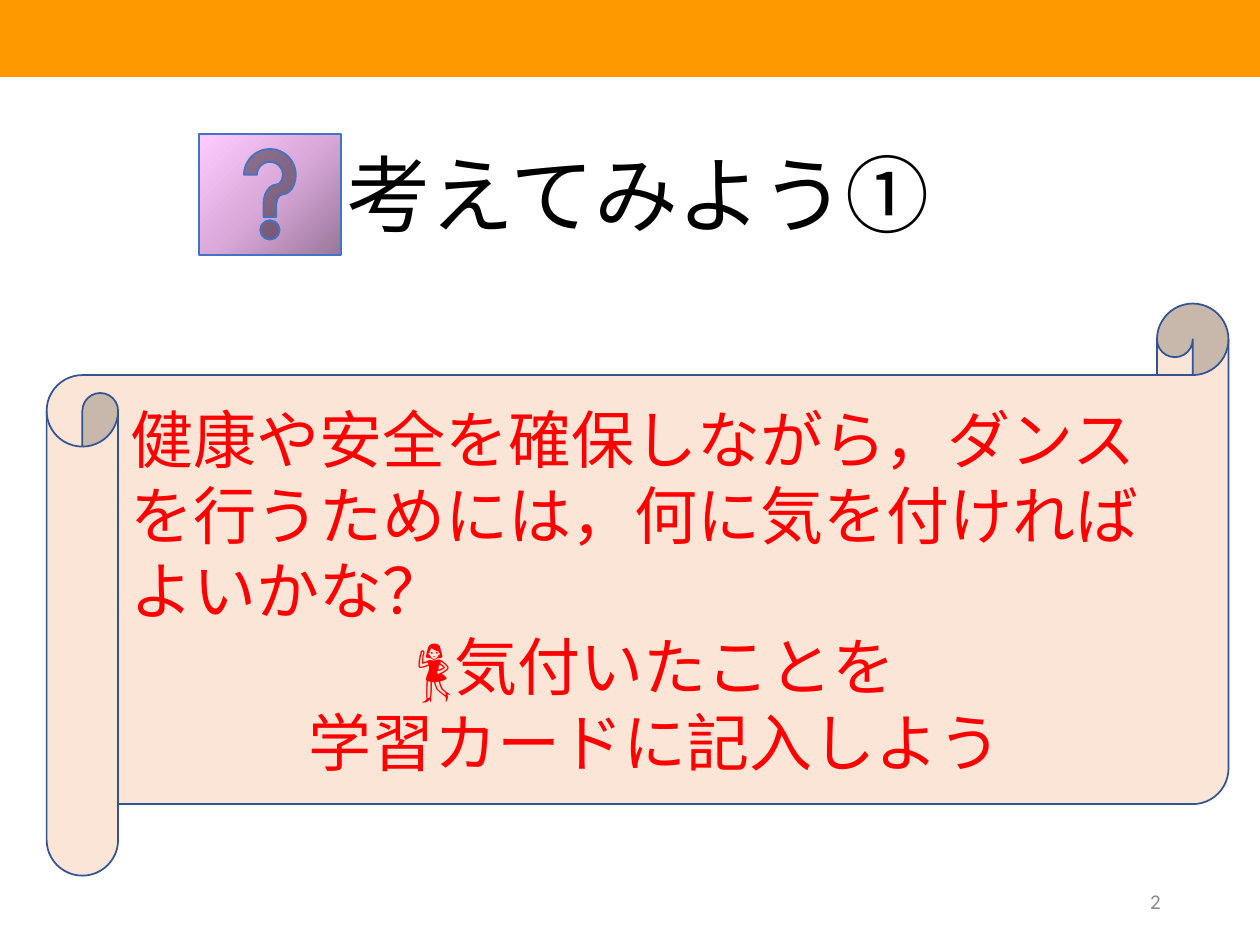
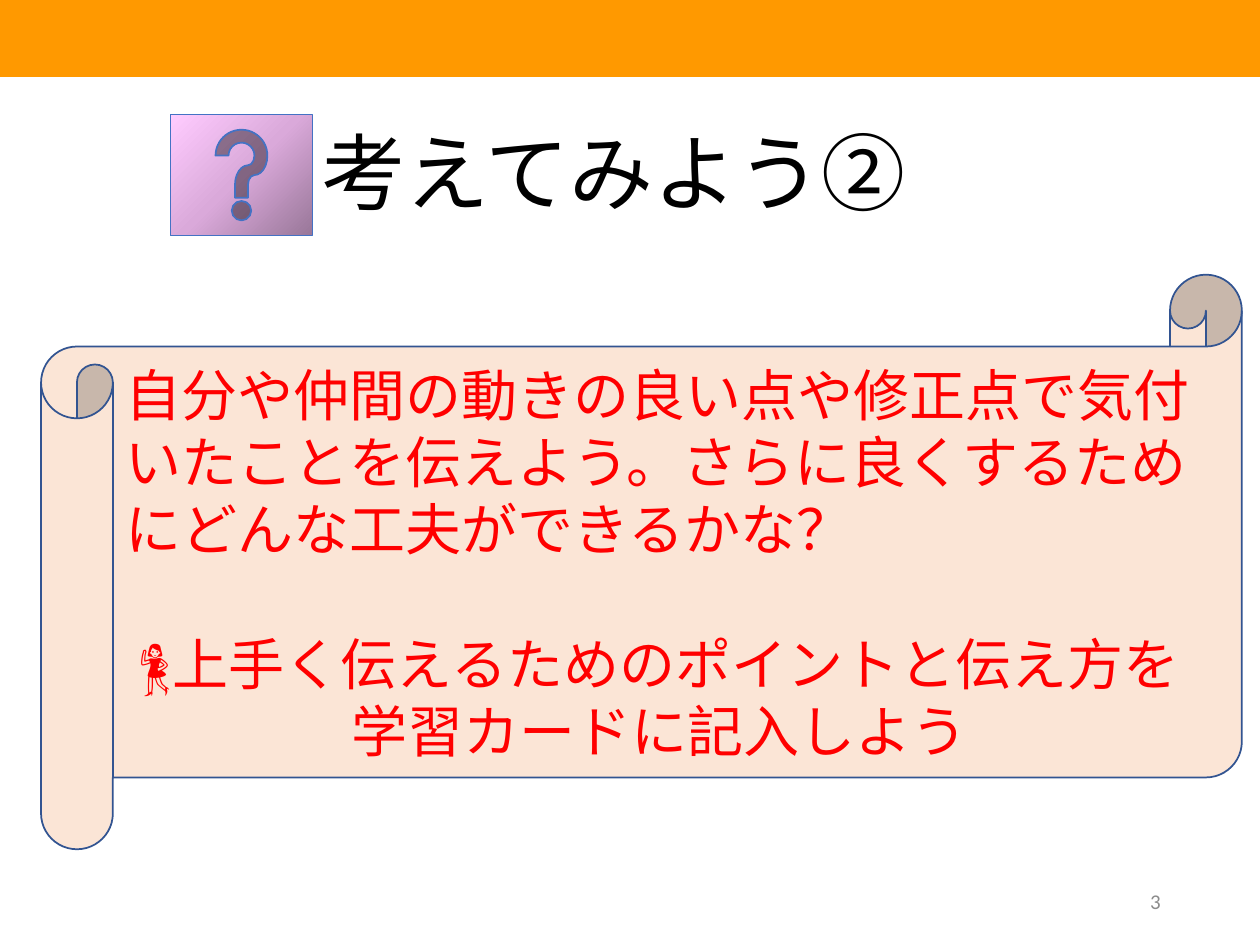
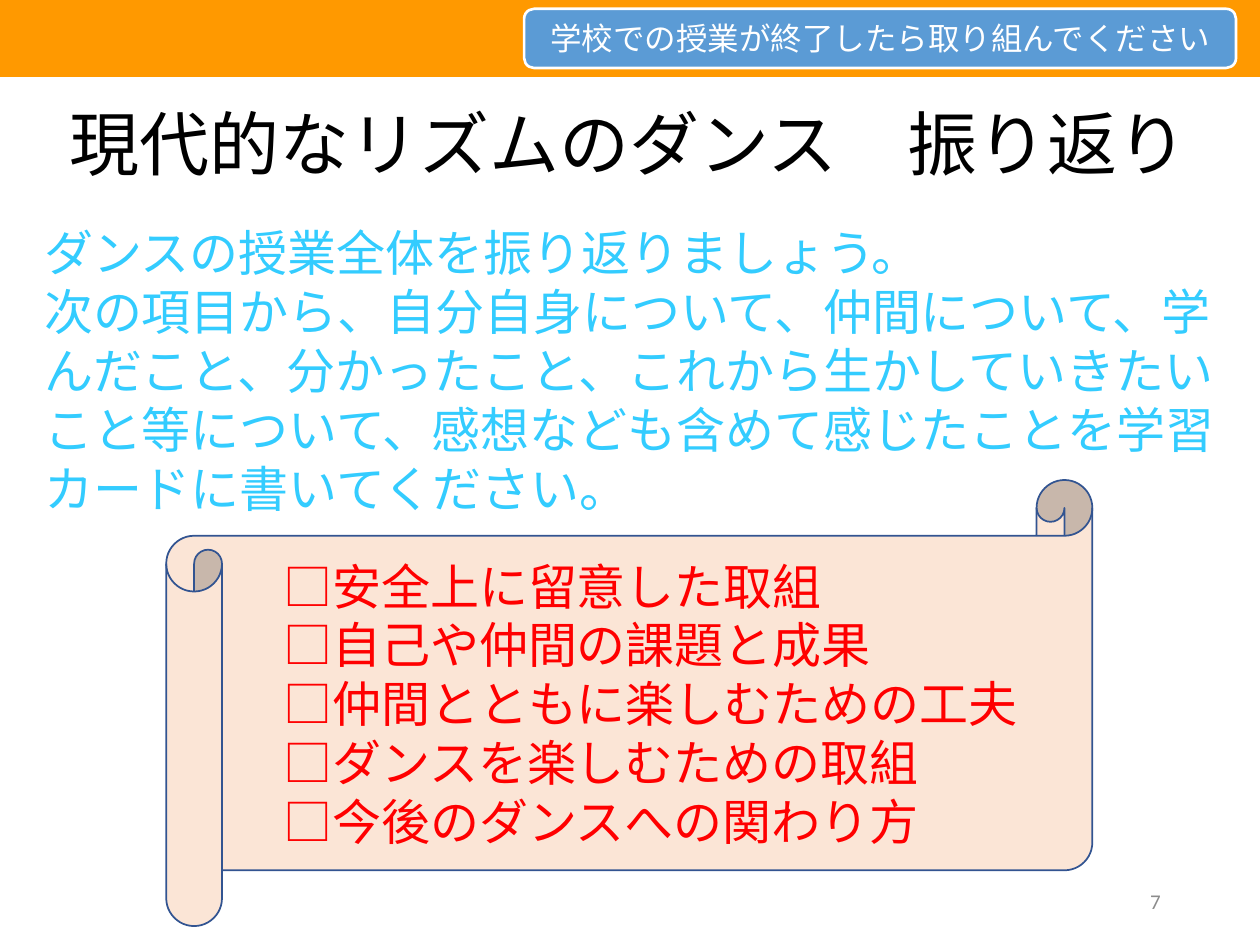
from copy import deepcopy
from dataclasses import dataclass

from lxml import etree
from pptx import Presentation
from pptx.dml.color import RGBColor
from pptx.enum.shapes import MSO_SHAPE
from pptx.enum.text import MSO_ANCHOR, PP_ALIGN
from pptx.oxml.ns import qn
from pptx.util import Pt

RECT, ROUND = MSO_SHAPE.RECTANGLE, MSO_SHAPE.ROUNDED_RECTANGLE
SCROLL, HELP = MSO_SHAPE.HORIZONTAL_SCROLL, MSO_SHAPE.ACTION_BUTTON_HELP
LEFT, CENTER, RIGHT = PP_ALIGN.LEFT, PP_ALIGN.CENTER, PP_ALIGN.RIGHT
TOP, MIDDLE = MSO_ANCHOR.TOP, MSO_ANCHOR.MIDDLE

ORANGE = RGBColor(0xFF, 0x99, 0x00)
PEACH = RGBColor(0xFB, 0xE5, 0xD6)
NAVY = RGBColor(0x32, 0x54, 0x91)
BLUE = RGBColor(0x44, 0x72, 0xC4)
NOTICE_BLUE = RGBColor(0x5B, 0x9B, 0xD5)
SKY = RGBColor(0x33, 0xCC, 0xFF)
RED = RGBColor(0xFF, 0x00, 0x00)
GRAY = RGBColor(0x8C, 0x8C, 0x8C)
BLACK = RGBColor(0x00, 0x00, 0x00)
WHITE = RGBColor(0xFF, 0xFF, 0xFF)
PINKS = (RGBColor(0x99, 0x77, 0x99), RGBColor(0xDA, 0xA9, 0xDA), RGBColor(0xFF, 0xCC, 0xFF))

LATIN, GOTHIC = "Calibri", "Noto Sans CJK JP"
LINE_RATIO = 1.2
DANCER = "💃"


@dataclass(frozen=True)
class Box:
    """A frame in points."""
    left: float
    top: float
    width: float
    height: float

    def emu(self) -> tuple:
        """Return the frame as lengths."""
        return Pt(self.left), Pt(self.top), Pt(self.width), Pt(self.height)


@dataclass(frozen=True)
class Style:
    """The look of a block of text."""
    size: float
    color: RGBColor
    font: str = LATIN
    anchor: MSO_ANCHOR = MIDDLE
    inset: float = 7.2


@dataclass(frozen=True)
class Line:
    """One paragraph."""
    text: str
    align: PP_ALIGN = LEFT
    indent: float = 0
    after: float = 0


@dataclass(frozen=True)
class Question:
    """A slide with a help button, a title and a scroll."""
    number: str
    title: str
    title_box: Box
    button_box: Box
    scroll_box: Box
    size: float
    lines: tuple


BAND = Box(-1.44, 0, 721.44, 44)
NUMBER = Box(508.32, 500.4, 162, 28.8)
NUMBER_STYLE = Style(12, GRAY)

QUESTIONS = (
    Question(
        "2", "考えてみよう①", Box(61.2, 77.76, 606.96, 78.48),
        Box(113.76, 76.5, 81, 69.12), Box(26.64, 173.5, 675.36, 326.88), 36,
        (Line("健康や安全を確保しながら，ダンスを行うためには，何に気を付ければよいかな？"),
         Line(DANCER + "気付いたことを", CENTER),
         Line("学習カードに記入しよう", CENTER))),
    Question(
        "3", "考えてみよう②", Box(38.16, 65.52, 624.96, 134.64),
        Box(97.5, 65.52, 81, 69.12), Box(23.5, 157, 686.16, 328.32), 32,
        (Line("自分や仲間の動きの良い点や修正点で気付いたことを伝えよう。"
              "さらに良くするためにどんな工夫ができるかな？", after=32 * LINE_RATIO),
         Line(DANCER + "上手く伝えるためのポイントと伝え方を", CENTER),
         Line("学習カードに記入しよう", CENTER))),
)

REVIEW_INTRO = (
    Line("ダンスの授業全体を振り返りましょう。"),
    Line("次の項目から、自分自身について、仲間について、学んだこと、分かったこと、"
         "これから生かしていきたいこと等について、感想なども含めて感じたことを"
         "学習カードに書いてください。"),
)
REVIEW_ITEMS = ("安全上に留意した取組", "自己や仲間の課題と成果", "仲間とともに楽しむための工夫",
                "ダンスを楽しむための取組", "今後のダンスへの関わり方")


def add_runs(p, text: str) -> None:
    """Add text in the Gothic face, with the dancer symbol in a run of its own."""
    for part in text.partition(DANCER):
        if part:
            r = p.add_run()
            r.text = part
            if part != DANCER:
                etree.SubElement(r._r.get_or_add_rPr(), qn("a:ea"), typeface=GOTHIC)


def write(shape, lines: tuple, style: Style) -> None:
    """Fill a shape with styled paragraphs."""
    tf = shape.text_frame
    tf.word_wrap = True
    tf.vertical_anchor = style.anchor
    tf.margin_left = tf.margin_right = Pt(style.inset)
    tf.margin_top = tf.margin_bottom = Pt(3.6)
    for i, line in enumerate(lines):
        p = tf.add_paragraph() if i else tf.paragraphs[0]
        add_runs(p, line.text)
        p.alignment = line.align
        p.line_spacing = Pt(style.size * LINE_RATIO)
        p.space_after = Pt(line.after)
        p.font.size = Pt(style.size)
        p.font.name = style.font
        p.font.color.rgb = style.color
        p._p.get_or_add_pPr().set("marL", str(Pt(line.indent)))


def add_text(s, box: Box, lines: tuple, style: Style) -> None:
    """Add a text box."""
    write(s.shapes.add_textbox(*box.emu()), lines, style)


def add_shape(s, kind: MSO_SHAPE, box: Box, fill: RGBColor | None = None,
              line: RGBColor | None = None, weight: float = 1):
    """Add a flat preset shape."""
    sp = s.shapes.add_shape(kind, *box.emu())
    sp.shadow.inherit = False
    if fill is not None:
        sp.fill.solid()
        sp.fill.fore_color.rgb = fill
    if line is None:
        sp.line.fill.background()
    else:
        sp.line.color.rgb = line
        sp.line.width = Pt(weight)
    return sp


def add_scroll(s, box: Box, lines: tuple, size: float) -> None:
    """Add a peach scroll with red text."""
    write(add_shape(s, SCROLL, box, PEACH, NAVY), lines, Style(size, RED))


def add_help_button(s, box: Box) -> None:
    """Add a help button with a pink gradient."""
    sp = add_shape(s, HELP, box, line=BLUE)
    sp.fill.gradient()
    sp.fill.gradient_angle = 135
    first = next(sp._element.spPr.iter(qn("a:gs")))
    first.addnext(deepcopy(first))
    for i, (stop, color) in enumerate(zip(sp.fill.gradient_stops, PINKS)):
        stop.color.rgb = color
        stop.position = i / 2


def add_page(prs, number: str, title: str, title_box: Box, title_size: float):
    """Add a slide with its band, title and number."""
    s = prs.slides.add_slide(prs.slide_layouts[6])
    add_shape(s, RECT, BAND, ORANGE)
    add_text(s, title_box, (Line(title, CENTER),), Style(title_size, BLACK, GOTHIC, TOP, 1.44))
    add_text(s, NUMBER, (Line(number, RIGHT),), NUMBER_STYLE)
    return s


def add_question(prs, question: Question) -> None:
    """Add a question slide."""
    s = add_page(prs, question.number, question.title, question.title_box, 48)
    add_scroll(s, question.scroll_box, question.lines, question.size)
    add_help_button(s, question.button_box)


def add_review(prs) -> None:
    """Add the closing review slide."""
    s = add_page(prs, "7", "現代的なリズムのダンス　振り返り", Box(21.6, 54, 675.36, 95.04), 40)
    items = tuple(Line("□" + item, indent=28) for item in REVIEW_ITEMS)
    add_scroll(s, Box(95, 274.32, 529.2, 254.88), items, 28)
    add_text(s, Box(23.76, 123.84, 675.36, 106.56), REVIEW_INTRO,
             Style(28, SKY, GOTHIC, TOP, 1.44))
    notice = add_shape(s, ROUND, Box(299.52, 5.04, 406.8, 33.84), NOTICE_BLUE, WHITE, 1.5)
    write(notice, (Line("学校での授業が終了したら取り組んでください", CENTER),), Style(18, WHITE))


def main() -> None:
    """Build the presentation."""
    prs = Presentation()
    prs.slide_width, prs.slide_height = Pt(720), Pt(540)
    for question in QUESTIONS:
        add_question(prs, question)
    add_review(prs)
    prs.save("out.pptx")


if __name__ == "__main__":
    main()
